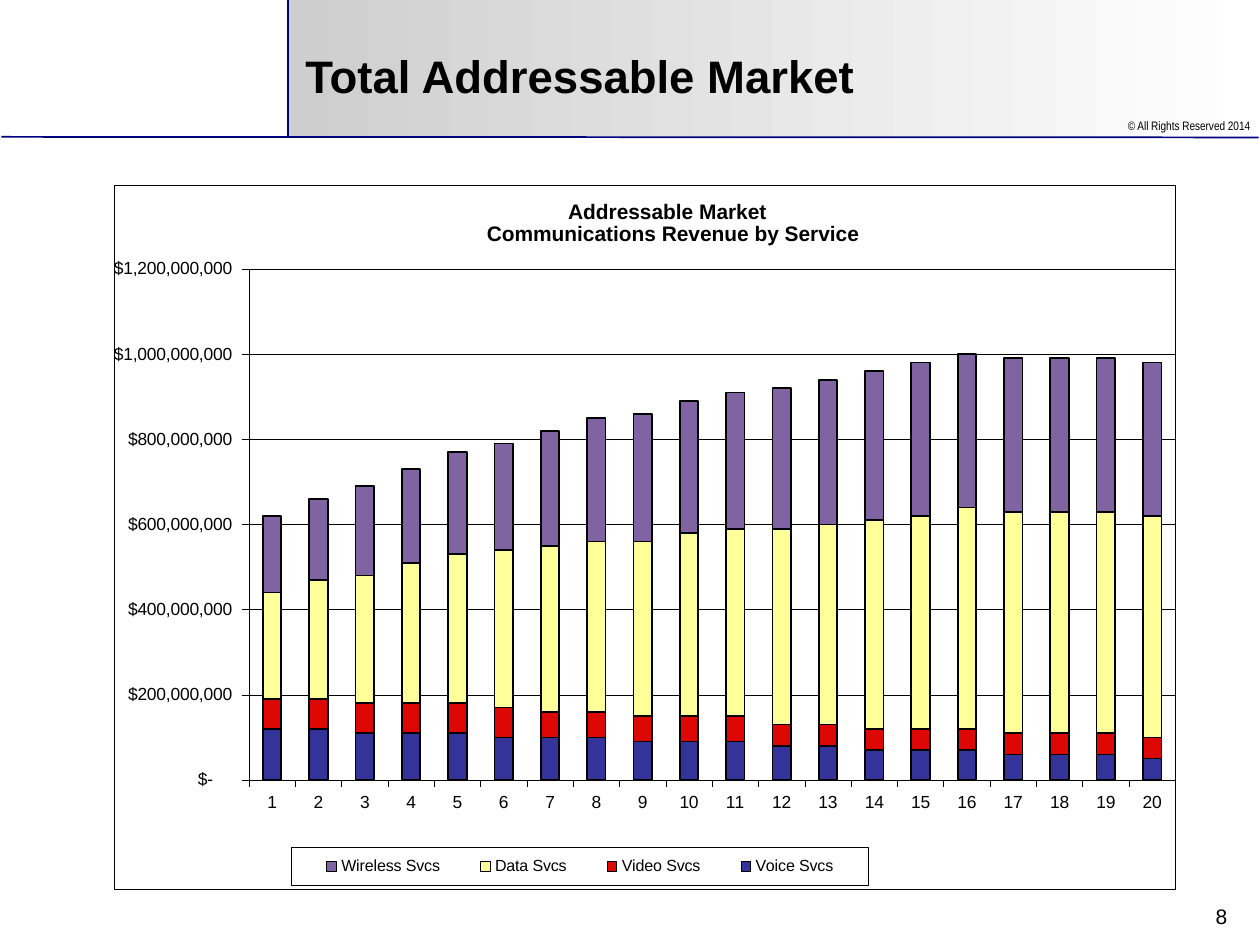
from lxml.etree import SubElement
from pptx import Presentation
from pptx.chart.data import CategoryChartData
from pptx.dml.color import RGBColor
from pptx.enum.chart import XL_CHART_TYPE as Chart, XL_LEGEND_POSITION as Legend
from pptx.enum.chart import XL_TICK_LABEL_POSITION as LabelPos, XL_TICK_MARK as Tick
from pptx.enum.shapes import MSO_CONNECTOR, MSO_SHAPE
from pptx.enum.text import MSO_ANCHOR, PP_ALIGN
from pptx.oxml import parse_xml
from pptx.oxml.ns import nsdecls, qn
from pptx.util import Cm, Pt

BLACK, WHITE, NAVY = "000000", "FFFFFF", "000080"
MONEY = r'_("$"* #,##0_);_("$"* \(#,##0\);_("$"* "-"??_);_(@_)'

# Revenue by service, in tens of millions of dollars, bottom of the stack first
SERVICES = [
    ("Voice Svcs", "333399",
     [12, 12, 11, 11, 11, 10, 10, 10, 9, 9, 9, 8, 8, 7, 7, 7, 6, 6, 6, 5]),
    ("Video Svcs", "DD0806", [7] * 6 + [6] * 5 + [5] * 9),
    ("Data Svcs", "FFFF99",
     [25, 28, 30, 33, 35, 37, 39, 40, 41, 43, 44, 46, 47, 49, 50] + [52] * 5),
    ("Wireless Svcs", "8064A2",
     [18, 19, 21, 22, 24, 25, 27, 29, 30, 31, 32, 33, 34, 35] + [36] * 6),
]


def rgb(color):
    return RGBColor.from_string(color)


def set_font(font, size, name="Arial", bold=False):
    font.size, font.name, font.bold = Pt(size), name, bold
    font.color.rgb = rgb(BLACK)


def set_line(line, width, color=BLACK):
    line.color.rgb = rgb(color)
    line.width = Pt(width)


def add_text(s, text, box, size, name="Arial"):
    tf = s.shapes.add_textbox(*map(Cm, box)).text_frame
    tf.word_wrap, tf.margin_right = True, Cm(0.2)
    p = tf.paragraphs[0]
    p.text, p.alignment = text, PP_ALIGN.RIGHT
    set_font(p.font, size, name)


def add_rule(s, *ends):
    c = s.shapes.add_connector(MSO_CONNECTOR.STRAIGHT, *map(Cm, ends))
    set_line(c.line, 1, NAVY)
    SubElement(c._element.spPr, qn("a:effectLst"))


def add_band(s, *box):
    sp = s.shapes.add_shape(MSO_SHAPE.RECTANGLE, *map(Cm, box))
    sp.shadow.inherit = False
    sp.line.fill.background()
    sp.fill.gradient()
    sp.fill.gradient_angle = 0
    for stop, color, pos in zip(sp.fill.gradient_stops, ("CECECE", WHITE), (0, 1)):
        stop.color.rgb, stop.position = rgb(color), pos


def set_title(s, text, *box):
    sp = s.shapes.title
    sp.left, sp.top, sp.width, sp.height = map(Cm, box)
    tf = sp.text_frame
    tf.text, tf.vertical_anchor = text, MSO_ANCHOR.MIDDLE
    p = tf.paragraphs[0]
    p.alignment = PP_ALIGN.LEFT
    set_font(p.font, 26, bold=True)
    # Bring the title in front of the header band
    s.shapes._spTree.append(sp._element)


def set_layout(element, inner=False, **percents):
    """Place a chart part by percentages of the chart area."""
    for old in element.findall(qn("c:layout")):
        element.remove(old)
    target = '<c:layoutTarget val="inner"/>' if inner else ""
    modes = "".join(f'<c:{k}Mode val="edge"/>' for k in "xy")
    sizes = "".join(f'<c:{k} val="{v / 100:.3f}"/>' for k, v in percents.items())
    layout = parse_xml(f'<c:layout {nsdecls("c")}><c:manualLayout>{target}'
                       f'{modes}{sizes}</c:manualLayout></c:layout>')
    before = [e for e in element
              if e.tag in (qn("c:tx"), qn("c:legendPos"), qn("c:legendEntry"))]
    element.insert(len(before), layout)


def frame(element, before):
    """Give a chart part a white fill and a thin black border."""
    sp_pr = parse_xml(
        f'<c:spPr {nsdecls("c", "a")}><a:solidFill><a:srgbClr val="{WHITE}"/></a:solidFill>'
        f'<a:ln w="3175"><a:solidFill><a:srgbClr val="{BLACK}"/></a:solidFill></a:ln></c:spPr>')
    element.find(qn(before)).addprevious(sp_pr)


def format_axis(axis):
    axis.major_tick_mark, axis.minor_tick_mark = Tick.OUTSIDE, Tick.NONE
    set_font(axis.tick_labels.font, 10)
    set_line(axis.format.line, 0.25)


def add_chart(s, *box):
    data = CategoryChartData(number_format=MONEY)
    data.categories = [str(n) for n in range(1, 21)]
    for name, _, tens in SERVICES:
        data.add_series(name, [v * 10_000_000 for v in tens])
    chart = s.shapes.add_chart(Chart.COLUMN_STACKED, *map(Cm, box), data).chart
    set_font(chart.font, 10)
    frame(chart._chartSpace, "c:txPr")

    # Columns
    plot = chart.plots[0]
    plot.gap_width, plot.overlap, plot.vary_by_categories = 150, 100, False
    for series, (_, color, _) in zip(plot.series, SERVICES):
        series.format.fill.solid()
        series.format.fill.fore_color.rgb = rgb(color)
        set_line(series.format.line, 1)
    set_layout(chart._chartSpace.chart.plotArea, inner=True,
               x=12.7, y=11.9, w=87.3, h=72.6)

    # Axes
    category, value = chart.category_axis, chart.value_axis
    format_axis(category)
    format_axis(value)
    category.tick_label_position = LabelPos.LOW
    value.minimum_scale, value.maximum_scale = 0, 1_200_000_000
    value.major_unit = 200_000_000
    value.tick_labels.number_format = MONEY
    value.tick_labels.number_format_is_linked = False
    set_line(value.major_gridlines.format.line, 0.25)

    # Title
    tf = chart.chart_title.text_frame
    tf.text = "Addressable Market \n Communications Revenue by Service"
    for p in tf.paragraphs:
        set_font(p.font, 12, bold=True)
    chart.chart_title.include_in_layout = False
    set_layout(chart.chart_title._element, x=34.2, y=1.3)

    # Legend
    chart.has_legend = True
    legend = chart.legend
    legend.position, legend.include_in_layout = Legend.RIGHT, False
    set_font(legend.font, 9.2)
    set_layout(legend._element, x=16.7, y=94.1, w=54.4, h=5.3)
    frame(legend._element, "c:txPr")


def main():
    prs = Presentation()
    prs.slide_width, prs.slide_height = Cm(25.4), Cm(19.05)
    s = prs.slides.add_slide(prs.slide_layouts[5])

    # Header
    add_band(s, 5.8, 0, 19.55, 2.77)
    add_rule(s, 0.03, 2.76, 25.37, 2.77)
    add_rule(s, 5.8, 0, 5.8, 2.77)
    add_text(s, "© All Rights Reserved 2014", (21.74, 2.26, 3.66, 0.84), 7, "Arial Narrow")
    set_title(s, "Total Addressable Market", 5.9, 0.56, 17.2, 1.93)

    # Content and page number
    add_chart(s, 2.2, 3.73, 21.5, 14.2)
    add_text(s, "8", (19.71, 18.08, 5.23, 0.79), 12)
    prs.save("out.pptx")


if __name__ == "__main__":
    main()
